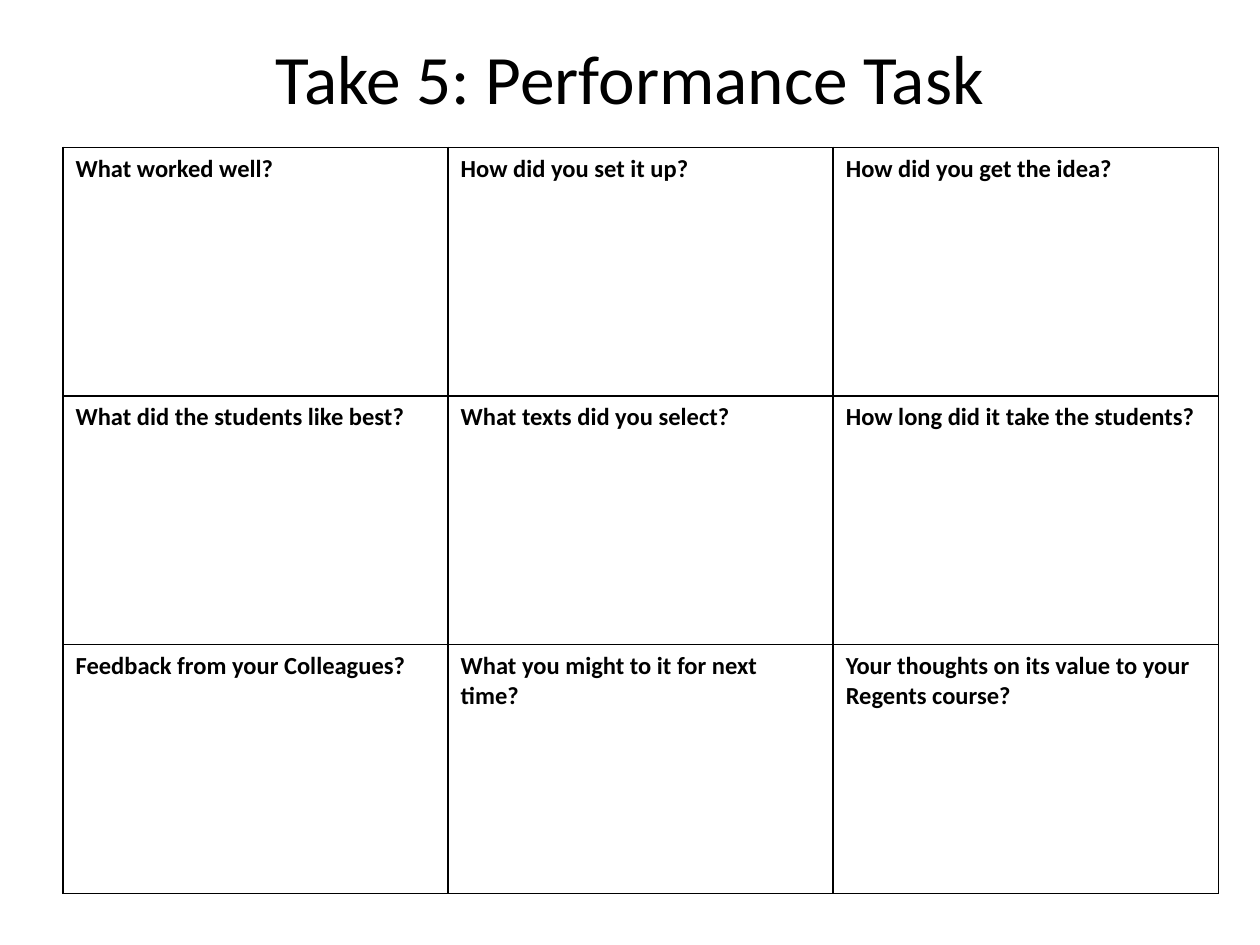
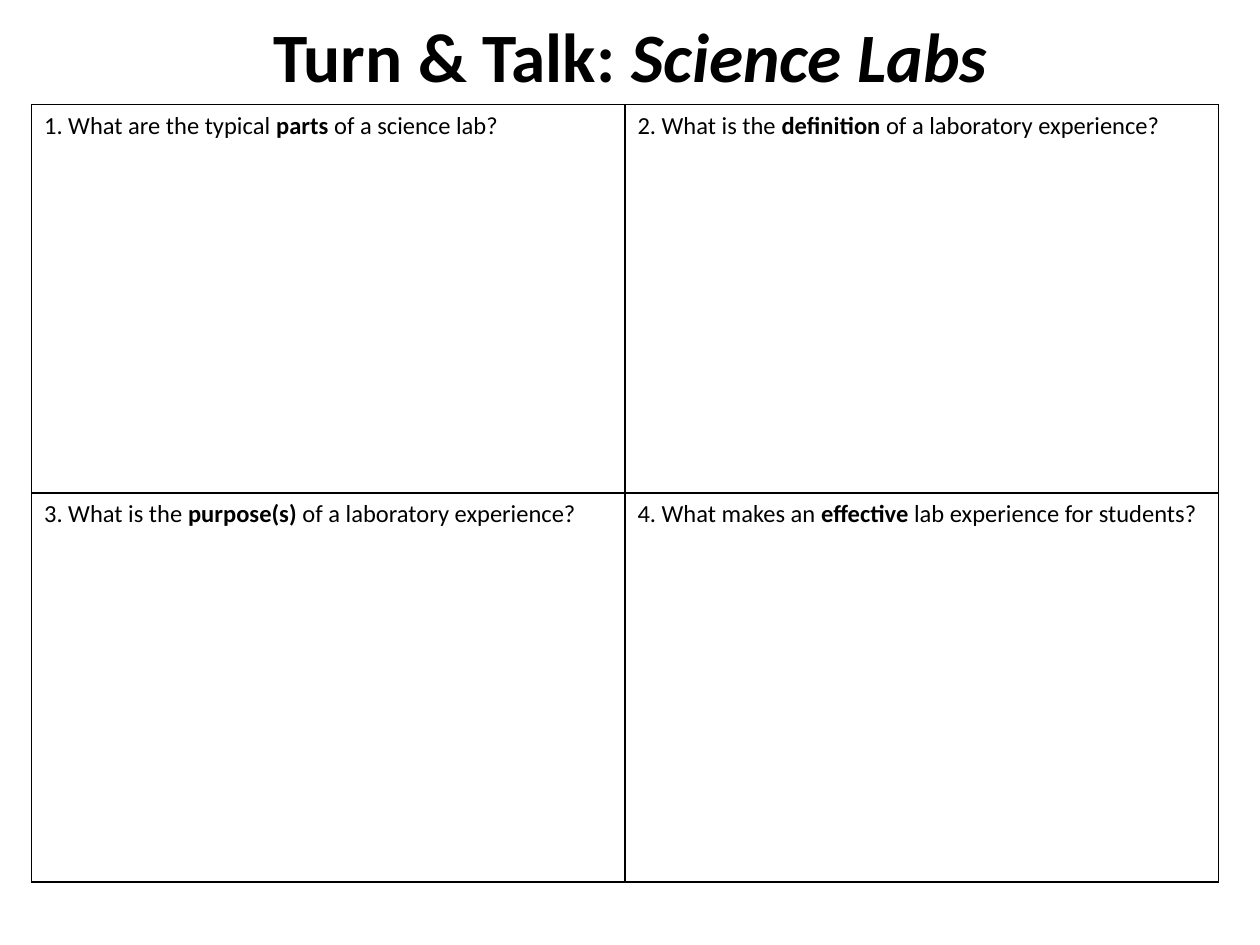
from dataclasses import dataclass
from itertools import product

from lxml.etree import SubElement
from pptx import Presentation
from pptx.dml.color import RGBColor
from pptx.enum.text import MSO_ANCHOR, MSO_AUTO_SIZE, PP_ALIGN
from pptx.oxml.ns import qn
from pptx.util import Inches, Pt


@dataclass(frozen=True)
class Theme:
    font: str = "Calibri"
    ink: str = "000000"
    paper: str = "FFFFFF"
    head: float = 39.6
    body: float = 14
    rule: float = 1


THEME = Theme()
WIDE, HIGH = Inches(10), Inches(7.5)


def box(left, top, width, height):
    return [round(part * side) for part, side in
            zip((left, top, width, height), (WIDE, HIGH) * 2)]


def write(frame, parts, size):
    line = frame.paragraphs[0]
    line.text = ""
    for text, style in parts:
        run = line.add_run()
        run.text = text
        font = run.font
        font.name, font.size = THEME.font, Pt(size)
        font.color.rgb = RGBColor.from_string(THEME.ink)
        font.bold, font.italic = "b" in style, "i" in style
    return line


def add_title(slide, parts, top, height):
    title = slide.shapes.title
    title.left, title.top, title.width, title.height = box(0.05, top, 0.9, height)
    frame = title.text_frame
    frame.word_wrap = True
    frame.auto_size = MSO_AUTO_SIZE.NONE
    frame.vertical_anchor = MSO_ANCHOR.MIDDLE
    write(frame, parts, THEME.head).alignment = PP_ALIGN.CENTER


def add_rules(cell):
    props = cell._tc.get_or_add_tcPr()
    for side in ("a:lnL", "a:lnR", "a:lnT", "a:lnB"):
        line = SubElement(props, qn(side), w=str(Pt(THEME.rule)))
        fill = SubElement(line, qn("a:solidFill"))
        SubElement(fill, qn("a:srgbClr"), val=THEME.ink)


def add_grid(slide, rows, area):
    count, span = len(rows), len(rows[0])
    left, top, width, height = box(*area)
    table = slide.shapes.add_table(count, span, left, top, width, height).table
    table.first_row = table.horz_banding = False
    for col in table.columns:
        col.width = width // span
    for row in table.rows:
        row.height = height // count
    for r, c in product(range(count), range(span)):
        cell = table.cell(r, c)
        add_rules(cell)
        cell.fill.solid()
        cell.fill.fore_color.rgb = RGBColor.from_string(THEME.paper)
        write(cell.text_frame, rows[r][c], THEME.body)


def add_page(deck, title, top, height, rows, area):
    slide = deck.slides.add_slide(deck.slide_layouts.get_by_name("Title Only"))
    add_title(slide, title, top, height)
    add_grid(slide, rows, area)


def ask(start, key, end):
    return [(start, ""), (key, "b"), (end, "")]


def main():
    deck = Presentation()
    deck.slide_width, deck.slide_height = WIDE, HIGH

    topics = [
        ["What worked well?", "How did you set it up?", "How did you get the idea?"],
        ["What did the students like best?", "What texts did you select?",
         "How long did it take the students?"],
        ["Feedback from your Colleagues?", "What you might to it for next time?",
         "Your thoughts on its value to your Regents course?"],
    ]
    add_page(deck, [("Take 5: Performance Task", "")], 0.3 / 7.5, 0.62 / 7.5,
             [[[(text, "b")] for text in row] for row in topics],
             (0.05, 1.17 / 7.5, 0.917, 5.92 / 7.5))

    labs = [
        [ask("1. What are the typical ", "parts", " of a science lab?"),
         ask("2. What is the ", "definition", " of a laboratory experience?")],
        [ask("3. What is the ", "purpose(s) ", "of a laboratory experience?"),
         ask("4. What makes an ", "effective", " lab experience for students?")],
    ]
    add_page(deck, [("Turn & Talk: ", "b"), ("Science Labs", "bi")],
             0.17 / 7.5, 0.53 / 7.5, labs,
             (0.025, 0.83 / 7.5, 0.942, 6.17 / 7.5))

    deck.save("out.pptx")


if __name__ == "__main__":
    main()
